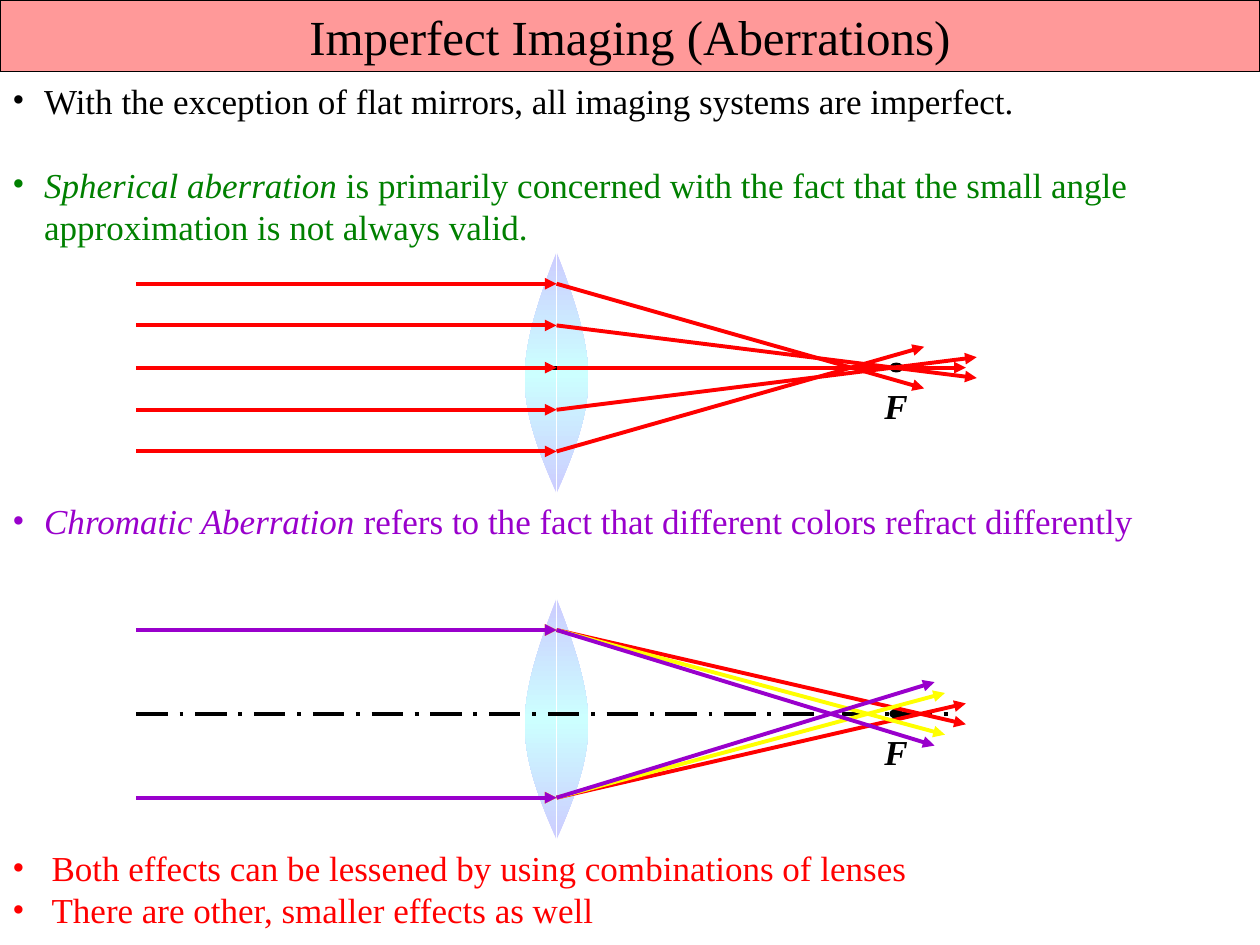
from dataclasses import dataclass
from copy import deepcopy

from lxml.etree import SubElement
from pptx import Presentation
from pptx.dml.color import RGBColor
from pptx.enum.dml import MSO_LINE
from pptx.enum.shapes import MSO_CONNECTOR, MSO_SHAPE
from pptx.enum.text import MSO_AUTO_SIZE, PP_ALIGN
from pptx.oxml.ns import qn
from pptx.util import Cm, Pt


@dataclass(frozen=True)
class Theme:
    font: str = "Times New Roman"
    title_size: int = 28
    body_size: int = 20
    ray_width: float = 2.25
    black: str = "000000"
    banner: str = "FF9999"
    green: str = "008000"
    red: str = "FF0000"
    yellow: str = "FFFF00"
    violet: str = "9900CC"
    lens_rim: str = "CCCCFF"
    lens_core: str = "CCFFFF"


SLIDE_WIDTH, SLIDE_HEIGHT = 25.4, 19.05
RAY_START, LENS_X, AXIS_END = 2.75, 11.22, 19.26
LENS_RISE, FOCUS_X = 2.33, 18.07
INNER, OUTER = 0.85, 1.69
LENS_CONTROLS = (
    (0, 0), (0.32, 0.86), (0.64, 1.73), (0.64, 2.54),
    (0.64, 3.35), (0.32, 4.11), (0, 4.87),
)


class OpticsSlide:
    """Holds the theme and the slide and draws each kind of element."""

    def __init__(self, slide, theme):
        self.shapes = slide.shapes
        self.theme = theme

    def style(self, run, color, size, bold=False, italic=False):
        font = run.font
        font.name, font.size = self.theme.font, Pt(size)
        font.bold, font.italic = bold, italic
        font.color.rgb = RGBColor.from_string(color)

    def title(self, text):
        theme = self.theme
        banner = self.shapes.add_shape(MSO_SHAPE.RECTANGLE, 0, 0, Cm(SLIDE_WIDTH), Cm(1.45))
        banner.shadow.inherit = False
        banner.fill.solid()
        banner.fill.fore_color.rgb = RGBColor.from_string(theme.banner)
        banner.line.color.rgb = RGBColor.from_string(theme.black)
        banner.line.width = Pt(0.75)
        frame = banner.text_frame
        frame.text = text
        frame.auto_size = MSO_AUTO_SIZE.SHAPE_TO_FIT_TEXT
        frame.paragraphs[0].alignment = PP_ALIGN.CENTER
        self.style(frame.paragraphs[0].runs[0], theme.black, theme.title_size)

    def text_box(self, left, top, width, height):
        frame = self.shapes.add_textbox(Cm(left), Cm(top), Cm(width), Cm(height)).text_frame
        frame.word_wrap = True
        frame.auto_size = MSO_AUTO_SIZE.SHAPE_TO_FIT_TEXT
        return frame

    def bullets(self, top, height, items, indent=0.64, gap=0):
        frame = self.text_box(0, top, SLIDE_WIDTH, height)
        for number, (term, statement, color) in enumerate(items):
            paragraph = frame.add_paragraph() if number else frame.paragraphs[0]
            properties = paragraph._p.get_or_add_pPr()
            properties.set("marL", str(Cm(indent)))
            properties.set("indent", str(-Cm(indent)))
            SubElement(properties, qn("a:buFont")).set("typeface", self.theme.font)
            SubElement(properties, qn("a:buChar")).set("char", "•")
            if number and gap:
                paragraph.space_before = Pt(gap)
            for words, italic in ((term, True), (statement, False)):
                if words:
                    run = paragraph.add_run()
                    run.text = words
                    self.style(run, color, self.theme.body_size, italic=italic)

    def curve(self, controls):
        builder = self.shapes.build_freeform(*controls[0])
        builder.add_line_segments(controls[1:], close=False)
        shape = builder.convert_to_shape()
        segments = list(shape._element.spPr.iter(qn("a:lnTo")))
        outline = segments[0].getparent()
        for first in range(0, len(segments), 3):
            bezier = SubElement(outline, qn("a:cubicBezTo"))
            for segment in segments[first:first + 3]:
                bezier.append(segment[0])
                outline.remove(segment)
        return shape

    def lens(self, axis):
        top = axis - LENS_RISE
        colors = (self.theme.lens_rim, self.theme.lens_core, self.theme.lens_rim)
        for side in (-1, 1):
            half = self.curve([(Cm(LENS_X + side * x), Cm(top + y)) for x, y in LENS_CONTROLS])
            half.shadow.inherit = False
            half.line.fill.background()
            half.fill.gradient()
            half.fill.gradient_angle = 90
            stops = half._element.spPr.find(qn("a:gradFill")).find(qn("a:gsLst"))
            stops.insert(1, deepcopy(stops[0]))
            for stop, position, color in zip(half.fill.gradient_stops, (0, 0.5, 1), colors):
                stop.position = position
                stop.color.rgb = RGBColor.from_string(color)

    def line(self, start, end, color, arrow=True):
        points = [Cm(value) for value in (*start, *end)]
        connector = self.shapes.add_connector(MSO_CONNECTOR.STRAIGHT, *points)
        connector.line.color.rgb = RGBColor.from_string(color)
        connector.line.width = Pt(self.theme.ray_width)
        if arrow:
            SubElement(connector.line._get_or_add_ln(), qn("a:tailEnd")).set("type", "triangle")
        else:
            connector.line.dash_style = MSO_LINE.LONG_DASH_DOT
        SubElement(connector._element.spPr, qn("a:effectLst"))

    def focus(self, axis):
        theme = self.theme
        dot = self.shapes.add_shape(
            MSO_SHAPE.OVAL, Cm(FOCUS_X - 0.14), Cm(axis - 0.1), Cm(0.28), Cm(0.2)
        )
        dot.shadow.inherit = False
        dot.fill.solid()
        dot.fill.fore_color.rgb = RGBColor.from_string(theme.black)
        dot.line.fill.background()
        label = self.text_box(17.58, axis + 0.21, 1.7, 1.12)
        label.text = "F"
        self.style(label.paragraphs[0].runs[0], theme.black, theme.body_size, True, True)

    def ray(self, axis, height, end_x, overshoot, color):
        bend = (LENS_X, axis + height)
        self.line((RAY_START, axis + height), bend, color)
        self.line(bend, (end_x, axis + overshoot), color)

    def diagram(self, axis, rays):
        self.lens(axis)
        self.line((RAY_START, axis), (AXIS_END, axis), self.theme.black, arrow=False)
        self.focus(axis)
        for height, end_x, overshoot, color in rays:
            for side in (-1, 1) if height else (1,):
                self.ray(axis, side * height, end_x, -side * overshoot, color)


def main():
    presentation = Presentation()
    presentation.slide_width, presentation.slide_height = Cm(SLIDE_WIDTH), Cm(SLIDE_HEIGHT)
    theme = Theme()
    page = OpticsSlide(presentation.slides.add_slide(presentation.slide_layouts[6]), theme)

    page.title("Imperfect Imaging (Aberrations)")
    page.bullets(1.47, 3.68, [
        ("", "With the exception of flat mirrors, all imaging systems are imperfect.", theme.black),
        ("Spherical aberration", " is primarily concerned with the fact that the small angle "
         "approximation is not always valid.", theme.green),
    ], gap=24)
    page.diagram(7.41, [
        (0, 19.47, 0, theme.red),
        (INNER, 19.69, 0.21, theme.red),
        (OUTER, 18.63, 0.42, theme.red),
    ])
    page.bullets(9.95, 1.12, [
        ("Chromatic Aberration", " refers to the fact that different colors refract differently",
         theme.violet),
    ])
    page.diagram(14.39, [
        (OUTER, 19.47, 0.21, theme.red),
        (OUTER, 19.05, 0.42, theme.yellow),
        (OUTER, 18.84, 0.64, theme.violet),
    ])
    page.bullets(16.94, 1.96, [
        ("", "Both effects can be lessened by using combinations of lenses", theme.red),
        ("", "There are other, smaller effects as well", theme.red),
    ], indent=0.79)
    presentation.save("out.pptx")


if __name__ == "__main__":
    main()
